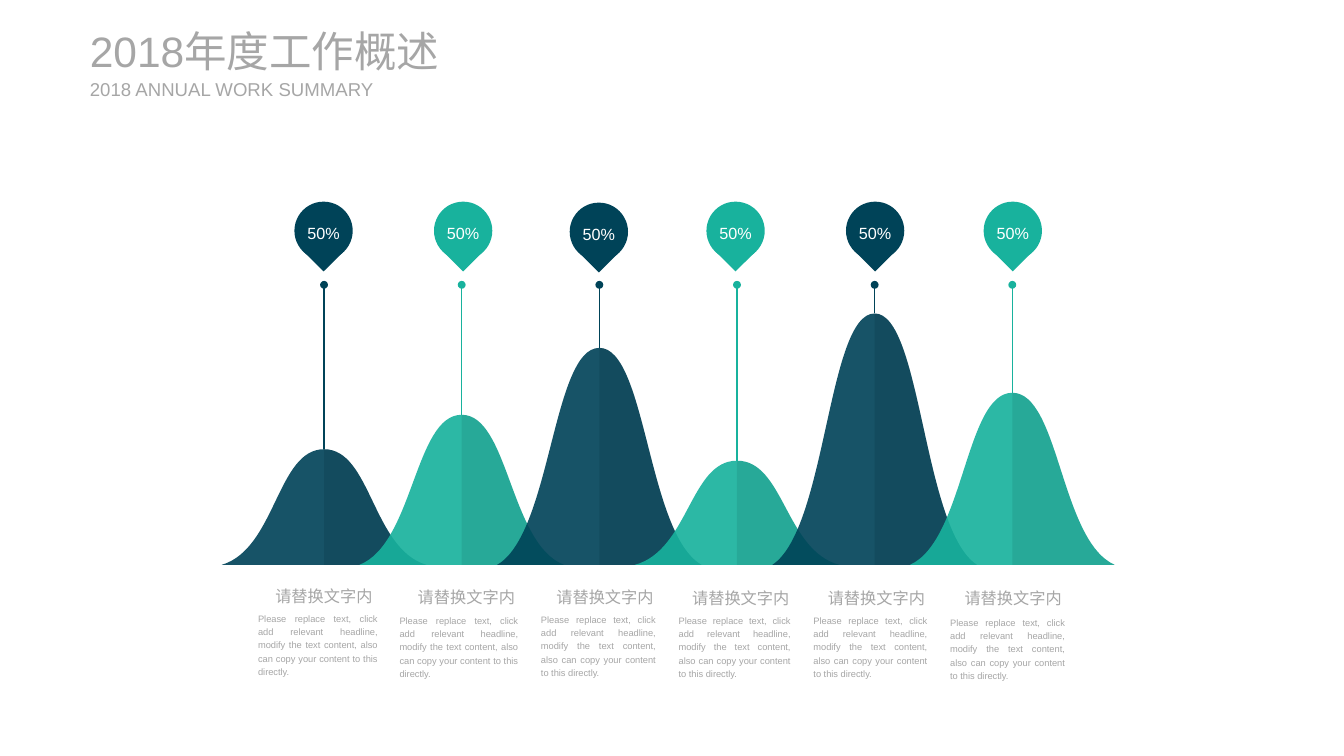
from lxml import etree
from pptx import Presentation, util as u
from pptx.dml.color import RGBColor
from pptx.enum import shapes, text
from pptx.oxml.ns import qn

NAVY, TEAL, GREY, WHITE = "004358", "18B29D", "A6A6A6", "FFFFFF"
SHADE = {NAVY: "00222C", TEAL: "0C594F"}
BASE, HILL_W, PITCH, FIRST = 5.91, 2.14, 1.44, 3.39
PIN_D, STEM_TOP = 0.61, 2.98
HILL_HEIGHTS = [1.21, 1.57, 2.27, 1.09, 2.63, 1.80]
PINS = [(3.08, 2.11), (4.54, 2.11), (5.96, 2.12),
        (7.39, 2.11), (8.85, 2.11), (10.29, 2.11)]
CAPTIONS = [
    (2.70, 6.09, 1.25, 0.18, 0.30),
    (4.18, 6.10, 1.24, 0.19, 0.31),
    (5.66, 6.10, 1.20, 0.16, 0.30),
    (7.10, 6.11, 1.17, 0.14, 0.30),
    (8.51, 6.11, 1.19, 0.15, 0.30),
    (9.94, 6.12, 1.20, 0.15, 0.31),
]
HEADLINE = "请替换文字内"
BODY = ("Please replace text, click add relevant headline, modify the text "
        "content, also can copy your content to this directly.")


def rgb(value):
    """Turn a hex string into a colour."""
    return RGBColor.from_string(value)


def set_all(target, values):
    """Set every attribute in a dict of format values."""
    for name, value in values.items():
        setattr(target, name, value)


def paint(sp, color, alpha=100):
    """Fill a shape without outline or shadow, at an opacity in percent."""
    sp.shadow.inherit = False
    sp.fill.solid()
    sp.fill.fore_color.rgb = rgb(color)
    sp.line.fill.background()
    if alpha < 100:
        clr = sp.fill._xPr.find(qn("a:solidFill"))[0]
        etree.SubElement(clr, qn("a:alpha"), val=str(alpha * 1000))


def write(sp, words, size, color, align, spacing=1.2, wrap=True,
          anchor=text.MSO_ANCHOR.TOP):
    """Write one paragraph into a shape without margins."""
    tf = sp.text_frame
    set_all(tf, dict(margin_left=0, margin_top=0, margin_right=0,
                     margin_bottom=0, word_wrap=wrap, vertical_anchor=anchor))
    p = tf.paragraphs[0]
    set_all(p, dict(alignment=align, line_spacing=spacing))
    r = p.add_run()
    r.text = words
    set_all(r.font, dict(name="Arial", size=u.Pt(size)))
    r.font.color.rgb = rgb(color)


def textbox(s, x, y, w, h, *args, **kwargs):
    """Add a text box at a place in inches."""
    write(s.shapes.add_textbox(*map(u.Inches, (x, y, w, h))), *args, **kwargs)


def outline(s, points, color, alpha=100, curves=()):
    """Draw a closed shape; each curve starts at the segment index given."""
    pts = [(u.Inches(x), u.Inches(y)) for x, y in points]
    fb = s.shapes.build_freeform(*pts[0], scale=1.0)
    fb.add_line_segments(pts[1:], close=True)
    sp = fb.convert_to_shape()
    segments = list(sp._element.iter(qn("a:lnTo")))
    for i in curves:
        bend = etree.Element(qn("a:cubicBezTo"))
        segments[i].addprevious(bend)
        for seg in segments[i:i + 3]:
            bend.append(seg[0])
            seg.getparent().remove(seg)
    paint(sp, color, alpha)


def slope(cx, y, half, h):
    """List the curve points down one side; a negative half goes left."""
    return [(cx + half * dx, y + h * dy)
            for dx, dy in [(0, 0), (0.46, 0), (0.47, 0.86), (1, 1)]]


def hill(s, x, y, w, h, color):
    """Draw a translucent bell with a shaded right half."""
    cx, half = x + w / 2, w / 2
    left, right = slope(cx, y, -half, h), slope(cx, y, half, h)
    outline(s, left + right[::-1], color, 91, curves=(0, 4))
    outline(s, right + [(cx, y + h)], SHADE[color], 15, curves=(0,))


def pin(s, x, y, d, color):
    """Draw a round percentage marker with a point below."""
    cx, tip = x + d / 2, y + 0.73
    sp = s.shapes.add_shape(shapes.MSO_SHAPE.OVAL,
                            *map(u.Inches, (x, y, d, d)))
    paint(sp, color)
    write(sp, "50%", 12.2, WHITE, text.PP_ALIGN.CENTER,
          anchor=text.MSO_ANCHOR.MIDDLE)
    outline(s, [(cx + 0.21, tip - 0.21), (cx, tip), (cx - 0.21, tip - 0.21)],
            color)


def stem(s, x, top, bottom, color):
    """Draw a vertical line that starts with a dot."""
    ln = s.shapes.add_connector(shapes.MSO_CONNECTOR.STRAIGHT,
                                *map(u.Inches, (x, top, x, bottom)))
    ln.line.width = u.Pt(1)
    ln.line.color.rgb = rgb(color)
    etree.SubElement(ln.line._get_or_add_ln(), qn("a:headEnd"), type="oval")
    etree.SubElement(ln._element.spPr, qn("a:effectLst"))


def caption(s, x, y, w, indent, drop):
    """Write a headline and the text below it."""
    textbox(s, x + indent, y, 1.02, 0.25, HEADLINE, 12.2, GREY,
            text.PP_ALIGN.JUSTIFY, wrap=False)
    textbox(s, x, y + drop, w, 0.69, BODY, 7, GREY, text.PP_ALIGN.JUSTIFY)


def header(s, x, y):
    """Write the slide title and its subtitle."""
    for words, dy, w, h, size in [
            ("2018年度工作概述", 0, 4.32, 0.54, 32),
            ("2018 ANNUAL WORK SUMMARY", 0.55, 3.07, 0.24, 14)]:
        textbox(s, x, y + dy, w, h, words, size, GREY, text.PP_ALIGN.LEFT,
                spacing=1.0, anchor=text.MSO_ANCHOR.MIDDLE)


def main():
    """Build the summary slide."""
    prs = Presentation()
    set_all(prs, dict(slide_width=u.Inches(14.06),
                      slide_height=u.Inches(7.91)))
    s = prs.slides.add_slide(prs.slide_layouts[6])
    peaks = [(FIRST + i * PITCH, h, (NAVY, TEAL)[i % 2])
             for i, h in enumerate(HILL_HEIGHTS)]
    for cx, h, color in peaks:
        hill(s, cx - HILL_W / 2, BASE - h, HILL_W, h, color)
    for (x, y), (cx, h, color) in zip(PINS, peaks):
        pin(s, x, y, PIN_D, color)
        stem(s, cx, STEM_TOP, BASE - h, color)
    for place in CAPTIONS:
        caption(s, *place)
    header(s, 0.94, 0.26)
    prs.save("out.pptx")


if __name__ == "__main__":
    main()
